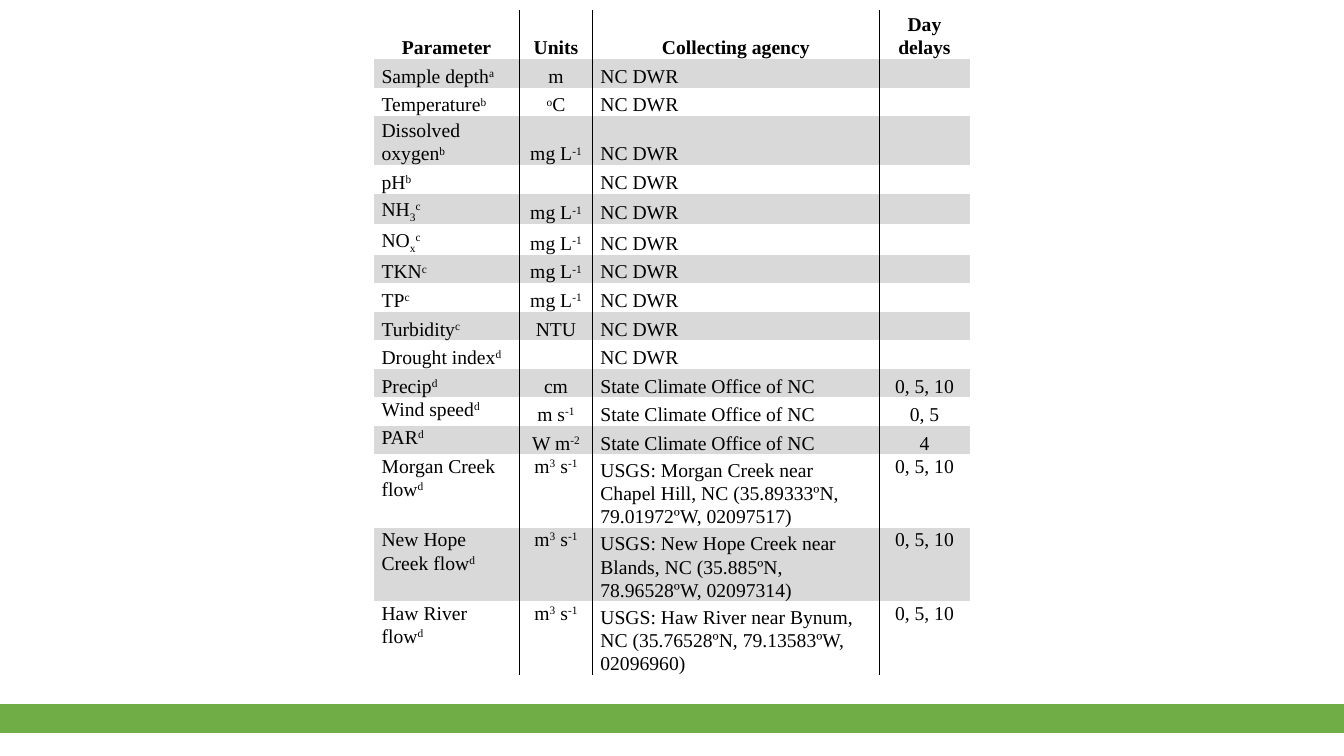
from lxml import etree
from pptx import Presentation
from pptx.dml.color import RGBColor
from pptx.enum.shapes import MSO_SHAPE
from pptx.enum.text import MSO_ANCHOR, PP_ALIGN
from pptx.oxml.ns import qn
from pptx.util import Inches, Pt

CENTER, LEFT = PP_ALIGN.CENTER, PP_ALIGN.LEFT
TOP, BOTTOM = MSO_ANCHOR.TOP, MSO_ANCHOR.BOTTOM
RECT = MSO_SHAPE.RECTANGLE

COLORS = {"text": "000000", "band": "D9D9D9", "footer": "70AD47"}
FONT, SIZE = "Times New Roman", Pt(14)

# "|" separates runs; a leading "^" raises a run and a leading "_" lowers it
DWR, CLIMATE = "NC DWR", "State Climate Office of NC"
MG_L, FLOW = "mg L|^-1", "m|^3| s|^-1"
HEADER = ("Parameter", "Units", "Collecting agency", "Day delays")
PARAMETERS = [
    ("Sample depth|^a", "m", DWR, ""),
    ("Temperature|^b", "^o|C", DWR, ""),
    ("Dissolved oxygen|^b", MG_L, DWR, ""),
    ("pH|^b", "", DWR, ""),
    ("NH|_3|^c", MG_L, DWR, ""),
    ("NO|_x|^c", MG_L, DWR, ""),
    ("TKN|^c", MG_L, DWR, ""),
    ("TP|^c", MG_L, DWR, ""),
    ("Turbidity|^c", "NTU", DWR, ""),
    ("Drought index|^d", "", DWR, ""),
    ("Precip|^d", "cm", CLIMATE, "0, 5, 10"),
    ("Wind speed|^d", "m s|^-1", CLIMATE, "0, 5"),
    ("PAR|^d", "W m|^-2", CLIMATE, "4"),
    ("Morgan Creek flow|^d", FLOW,
     "USGS: Morgan Creek near Chapel Hill, NC (35.89333ºN, 79.01972ºW, 02097517)", "0, 5, 10"),
    ("New Hope Creek flow|^d", FLOW,
     "USGS: New Hope Creek near Blands, NC (35.885ºN, 78.96528ºW, 02097314)", "0, 5, 10"),
    ("Haw River flow|^d", FLOW,
     "USGS: Haw River near Bynum, NC (35.76528ºN, 79.13583ºW, 02096960)", "0, 5, 10"),
]
ROWS = [HEADER] + PARAMETERS
COL_WIDTHS = (1.44, 0.73, 2.84, 0.9)
AGENCY_COL = 2
FIRST_TOP_ROW, FIRST_FLOW_ROW = 12, 14

# Row heights in points
LINE, TWO_LINES, SUBSCRIPT, THREE_LINES = 20.4, 35, 21.8, 52.5
HEIGHTS = {0: TWO_LINES, 3: TWO_LINES, 5: SUBSCRIPT, 6: SUBSCRIPT,
           14: THREE_LINES, 15: THREE_LINES, 16: THREE_LINES}


def rgb(name):
    return RGBColor.from_string(COLORS[name])


def set_borders(cell, col):
    """Rule the inner vertical edges and clear all other edges."""
    tcPr = cell._tc.get_or_add_tcPr()
    ruled = {"lnL": col > 0, "lnR": col < len(COL_WIDTHS) - 1}
    for i, side in enumerate(("lnL", "lnR", "lnT", "lnB")):
        ln = etree.Element(qn("a:" + side), w=str(Pt(1)))
        if ruled.get(side):
            fill = etree.SubElement(ln, qn("a:solidFill"))
            etree.SubElement(fill, qn("a:srgbClr"), val=COLORS["text"])
        else:
            etree.SubElement(ln, qn("a:noFill"))
        tcPr.insert(i, ln)


def write_runs(p, markup, bold):
    if not markup:
        etree.SubElement(p._p, qn("a:endParaRPr"), sz=str(int(SIZE.pt * 100)))
        return
    for part in markup.split("|"):
        r = p.add_run()
        r.text = part.lstrip("^_")
        r.font.name, r.font.size, r.font.bold = FONT, SIZE, bold
        r.font.color.rgb = rgb("text")
        shift = {"^": "30000", "_": "-25000"}.get(part[0])
        if shift:
            r.font._element.set("baseline", shift)


def fill_cell(cell, row, col, markup):
    cell.margin_left = cell.margin_right = Pt(5.4)
    cell.margin_top = cell.margin_bottom = 0
    at_top = (col == 0 and row >= FIRST_TOP_ROW) or (col != AGENCY_COL and row >= FIRST_FLOW_ROW)
    cell.vertical_anchor = TOP if at_top else BOTTOM
    if row % 2:
        cell.fill.solid()
        cell.fill.fore_color.rgb = rgb("band")
    else:
        cell.fill.background()
    set_borders(cell, col)
    p = cell.text_frame.paragraphs[0]
    p.alignment = CENTER if row == 0 or col in (1, 3) else LEFT
    p.line_spacing = 1.07
    write_runs(p, markup, row == 0)


def add_parameter_table(slide):
    heights = [Pt(HEIGHTS.get(i, LINE)) for i in range(len(ROWS))]
    table = slide.shapes.add_table(
        len(ROWS), len(COL_WIDTHS), Inches(3.71), Inches(0.1),
        Inches(sum(COL_WIDTHS)), sum(heights)).table
    table.first_row = table.horz_banding = False
    for column, width in zip(table.columns, COL_WIDTHS):
        column.width = Inches(width)
    for i, values in enumerate(ROWS):
        table.rows[i].height = heights[i]
        for j, markup in enumerate(values):
            fill_cell(table.cell(i, j), i, j, markup)


def main():
    prs = Presentation()
    prs.slide_width, prs.slide_height = Inches(13.33), Inches(7.5)
    slide = prs.slides.add_slide(prs.slide_layouts[6])
    footer = slide.shapes.add_shape(RECT, 0, Inches(6.99), prs.slide_width, Inches(0.28))
    footer.shadow.inherit = False
    footer.fill.solid()
    footer.fill.fore_color.rgb = rgb("footer")
    footer.line.color.rgb = rgb("footer")
    footer.line.width = Pt(1)
    add_parameter_table(slide)
    prs.save("out.pptx")


if __name__ == "__main__":
    main()
